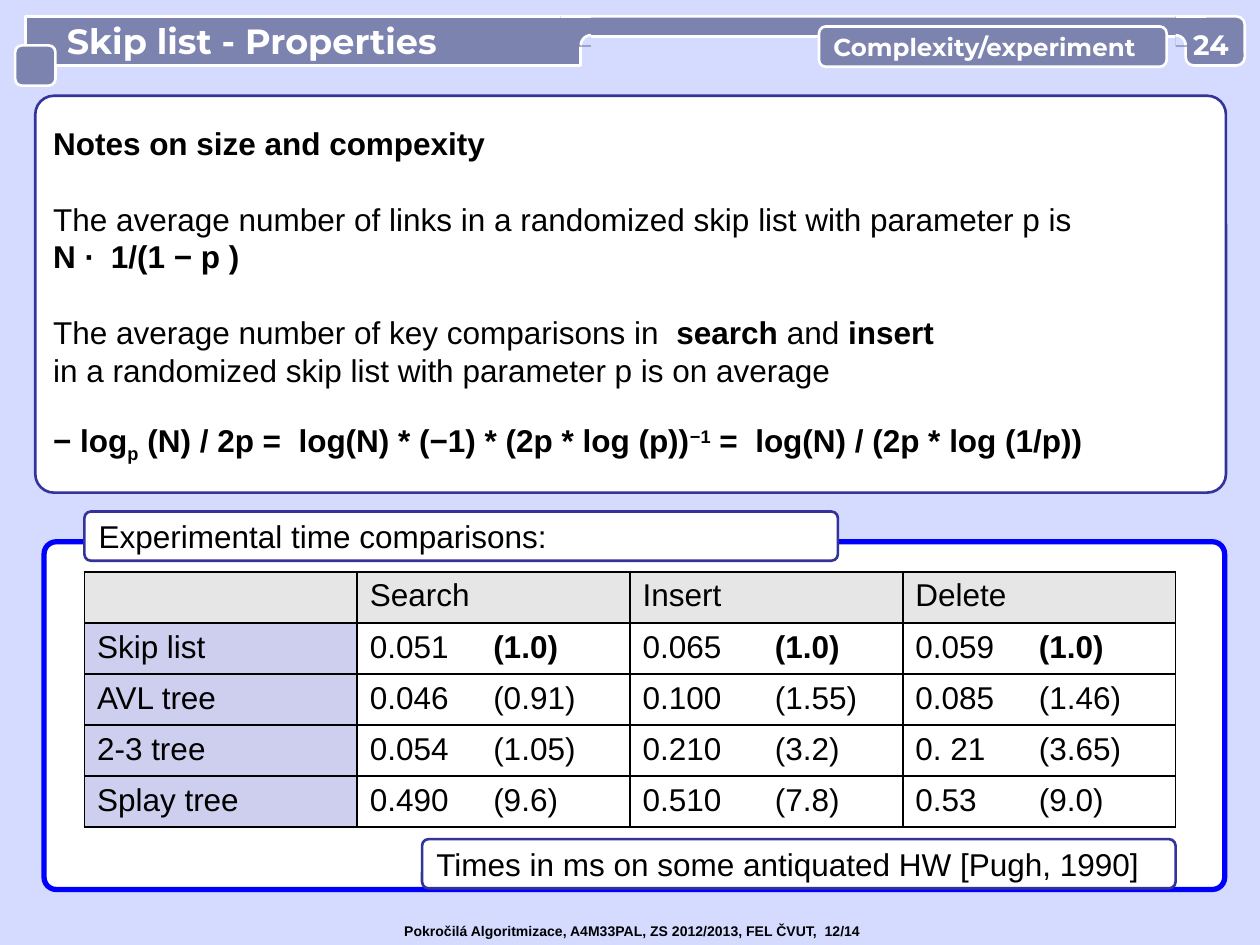
from math import cos, pi, sin

from lxml import etree
from pptx import Presentation
from pptx.dml.color import RGBColor
from pptx.enum.shapes import MSO_CONNECTOR, MSO_SHAPE
from pptx.enum.text import MSO_ANCHOR, MSO_AUTO_SIZE, PP_ALIGN
from pptx.oxml import parse_xml
from pptx.oxml.ns import nsdecls, qn
from pptx.util import Inches, Pt

ROUNDED, RECTANGLE = MSO_SHAPE.ROUNDED_RECTANGLE, MSO_SHAPE.RECTANGLE
STRAIGHT = MSO_CONNECTOR.STRAIGHT
MIDDLE, TOP = MSO_ANCHOR.MIDDLE, MSO_ANCHOR.TOP
LEFT, CENTER = PP_ALIGN.LEFT, PP_ALIGN.CENTER

BACKGROUND, HEADER, WHITE, BLACK = "D5DAFF", "7D83AF", "FFFFFF", "000000"
FRAME, OUTLINE = "0000FF", "333399"
HEADER_CELL, NAME_CELL = "E6E6E6", "CECEEF"

# Content: a paragraph is a list of (text, style) runs; "b" bold, "_" and "^" baseline
TITLE = "Skip list - Properties"
TOPIC = "Complexity/experiment"
PAGE = "24"
FOOTER = "Pokročilá Algoritmizace, A4M33PAL, ZS 2012/2013, FEL ČVUT,  12/14"
CAPTION = "Experimental time comparisons:"
SOURCE = "Times in ms on some antiquated HW [Pugh, 1990]"
NOTES = [
    [("Notes on size and compexity", "b")],
    [("The average number of links in a randomized skip list with parameter p is", "")],
    [("N ∙  1/(1 − p )", "b")],
    [("The average number of key comparisons in  ", ""), ("search ", "b"),
     ("and ", ""), ("insert", "b")],
    [("in a randomized skip list with parameter p is on average", "")],
    [("− log", "b"), ("p", "b_"), (" (N) / 2p =  log(N) * (−1) * (2p * log (p))", "b"),
     ("−1", "b^"), (" =  log(N) / (2p * log (1/p))", "b")],
]
SPACED_NOTES = (1, 3, 5)
COLUMNS = ["", "Search", "Insert", "Delete"]
TIMES = [
    ("Skip list", ("0.051", "(1.0)"), ("0.065", "(1.0)"), ("0.059", "(1.0)")),
    ("AVL tree", ("0.046", "(0.91)"), ("0.100", "(1.55)"), ("0.085", "(1.46)")),
    ("2-3 tree", ("0.054", "(1.05)"), ("0.210", "(3.2)"), ("0. 21", "(3.65)")),
    ("Splay tree", ("0.490", "(9.6)"), ("0.510", "(7.8)"), ("0.53", "(9.0)")),
]
RATIO_TABS = [0.98, 1.05, 0.98]


def color(value):
    return RGBColor.from_string(value)


def write(frame, paragraphs, size=18, font="Arial", ink=BLACK, align=LEFT,
          anchor=MIDDLE, margins=None, leading=None, spaced=()):
    frame.word_wrap = True
    frame.auto_size = MSO_AUTO_SIZE.NONE
    frame.vertical_anchor = anchor
    if margins:
        (frame.margin_left, frame.margin_top,
         frame.margin_right, frame.margin_bottom) = map(Inches, margins)
    for index, runs in enumerate(paragraphs):
        paragraph = frame.paragraphs[0] if index == 0 else frame.add_paragraph()
        paragraph.alignment = align
        if leading:
            paragraph.line_spacing = Pt(leading)
        if index in spaced:
            paragraph.space_before = Pt(leading)
        for text, style in runs:
            run = paragraph.add_run()
            run.text = text
            run.font.size, run.font.name = Pt(size), font
            run.font.bold = "b" in style
            run.font.color.rgb = color(ink)
            if "_" in style:
                run.font._element.set("baseline", "-25000")
            if "^" in style:
                run.font._element.set("baseline", "30000")


def paint(shape, fill=None, line=None, width=1.5):
    if fill:
        shape.fill.solid()
        shape.fill.fore_color.rgb = color(fill)
    else:
        shape.fill.background()
    if line:
        shape.line.color.rgb = color(line)
        shape.line.width = Pt(width)
    else:
        shape.line.fill.background()
    shape.shadow.inherit = False


def add_box(slide, box, fill, line=None, width=1.5, corner=None):
    kind = RECTANGLE if corner is None else ROUNDED
    shape = slide.shapes.add_shape(kind, *map(Inches, box))
    if corner is not None:
        shape.adjustments[0] = corner
    paint(shape, fill, line, width)
    return shape


def add_path(slide, points, closed, **look):
    points = [(Inches(x), Inches(y)) for x, y in points]
    builder = slide.shapes.build_freeform(*points[0])
    builder.add_line_segments(points[1:], close=closed)
    paint(builder.convert_to_shape(), **look)


def add_joint(slide, left, center_x, direction):
    """Join a tab to the thin strip: patch, top edge and a concave corner."""
    add_box(slide, (left, 0.13, 0.24, 0.24), HEADER)
    edge = slide.shapes.add_connector(STRAIGHT, Inches(left), Inches(0.13),
                                      Inches(left + 0.24), Inches(0.13))
    edge.line.color.rgb = color(WHITE)
    edge.line.width = Pt(1.5)
    etree.SubElement(edge._element.spPr, qn("a:effectLst"))
    center_y, radius, steps = 0.36, 0.08, 12
    angles = [pi / 2 * step / steps for step in range(steps + 1)]
    arc = [(center_x + direction * radius * sin(angle), center_y - radius * cos(angle))
           for angle in angles]
    add_path(slide, arc + [(center_x, center_y)], True, fill=BACKGROUND)
    add_path(slide, arc, False, line=WHITE)


def format_cell(cell, fill):
    cell.fill.solid()
    cell.fill.fore_color.rgb = color(fill)
    for index, side in enumerate(("lnL", "lnR", "lnT", "lnB")):
        cell._tc.get_or_add_tcPr().insert(index, parse_xml(
            f'<a:{side} {nsdecls("a")} w="12700"><a:solidFill>'
            f'<a:srgbClr val="{BLACK}"/></a:solidFill></a:{side}>'))


def write_cell(cell, runs, tab=None):
    for text, style in runs:
        run = cell.text_frame.paragraphs[0].add_run()
        run.text = text
        run.font.size, run.font.name = Pt(18), "Arial"
        run.font.bold = "b" in style
        run.font.color.rgb = color(BLACK)
    if tab:
        properties = cell.text_frame.paragraphs[0]._p.get_or_add_pPr()
        properties.append(parse_xml(
            f'<a:tabLst {nsdecls("a")}><a:tab pos="{Inches(tab)}" algn="l"/></a:tabLst>'))


def add_times(slide):
    rows, columns = len(TIMES) + 1, len(COLUMNS)
    table = slide.shapes.add_table(rows, columns, Inches(0.67), Inches(4.54),
                                   Inches(8.66), Inches(0.405 * rows)).table
    for column, heading in enumerate(COLUMNS):
        cell = table.cell(0, column)
        format_cell(cell, HEADER_CELL)
        write_cell(cell, [(heading, "")] if heading else [])
    for row, (name, *values) in enumerate(TIMES, 1):
        format_cell(table.cell(row, 0), NAME_CELL)
        write_cell(table.cell(row, 0), [(name, "")])
        for column, ((time, ratio), tab) in enumerate(zip(values, RATIO_TABS), 1):
            format_cell(table.cell(row, column), WHITE)
            style = "b" if row == 1 else ""
            write_cell(table.cell(row, column), [(time + "\t", ""), (ratio, style)], tab)


def main():
    presentation = Presentation()
    presentation.slide_width, presentation.slide_height = Inches(10), Inches(7.5)
    slide = presentation.slides.add_slide(presentation.slide_layouts[5])
    slide.background.fill.solid()
    slide.background.fill.fore_color.rgb = color(BACKGROUND)

    # Title placeholder shaped as the left header tab
    title = slide.shapes.title
    title.left, title.top, title.width, title.height = map(Inches, (0.2, 0.13, 4.41, 0.39))
    title._element.spPr.append(parse_xml(
        f'<a:prstGeom {nsdecls("a")} prst="roundRect"><a:avLst>'
        '<a:gd name="adj" fmla="val 18800"/></a:avLst></a:prstGeom>'))
    title.fill.solid()
    title.fill.fore_color.rgb = color(HEADER)
    title.line.color.rgb = color(WHITE)
    title.line.width = Pt(1.5)
    write(title.text_frame, [[(TITLE, "b")]], size=20, font="Montserrat", ink=WHITE,
          margins=(0.33, 0, 0.1, 0))

    # Notes panel and experiment panel
    add_box(slide, (0.35, 4.3, 9.37, 2.76), WHITE, FRAME, 3, 0.035)
    notes = add_box(slide, (0.28, 0.76, 9.45, 3.15), WHITE, OUTLINE, corner=0.047)
    write(notes.text_frame, NOTES, leading=21.6, spaced=SPACED_NOTES)
    add_times(slide)
    for left, top, text in ((3.35, 6.66, SOURCE), (0.67, 4.06, CAPTION)):
        label = add_box(slide, (left, top, 5.98, 0.39), WHITE, OUTLINE, corner=0.131)
        write(label.text_frame, [[(text, "")]])

    # Header strip, joints and tabs
    add_box(slide, (4.61, 0.13, 4.88, 0.16), HEADER, WHITE, corner=0.5)
    add_joint(slide, 4.45, 4.69, -1)
    add_box(slide, (0.12, 0.36, 0.32, 0.32), HEADER, WHITE, corner=0.17)
    add_box(slide, (9.41, 0.13, 0.47, 0.39), HEADER, WHITE, corner=0.17)
    add_joint(slide, 9.33, 9.33, 1)
    topic = add_box(slide, (6.5, 0.21, 2.76, 0.32), HEADER, WHITE, corner=0.17)
    write(topic.text_frame, [[(TOPIC, "b")]], size=14, font="Montserrat", ink=WHITE)

    # Page number and footer
    page = slide.shapes.add_textbox(*map(Inches, (9.41, 0.22, 0.4, 0.27)))
    write(page.text_frame, [[(PAGE, "b")]], size=16, font="Montserrat", ink=WHITE,
          align=CENTER, margins=(0, 0, 0, 0))
    footer = slide.shapes.add_textbox(*map(Inches, (3.11, 7.27, 3.9, 0.24)))
    write(footer.text_frame, [[(FOOTER, "b")]], size=8, anchor=TOP)

    presentation.save("out.pptx")


if __name__ == "__main__":
    main()
